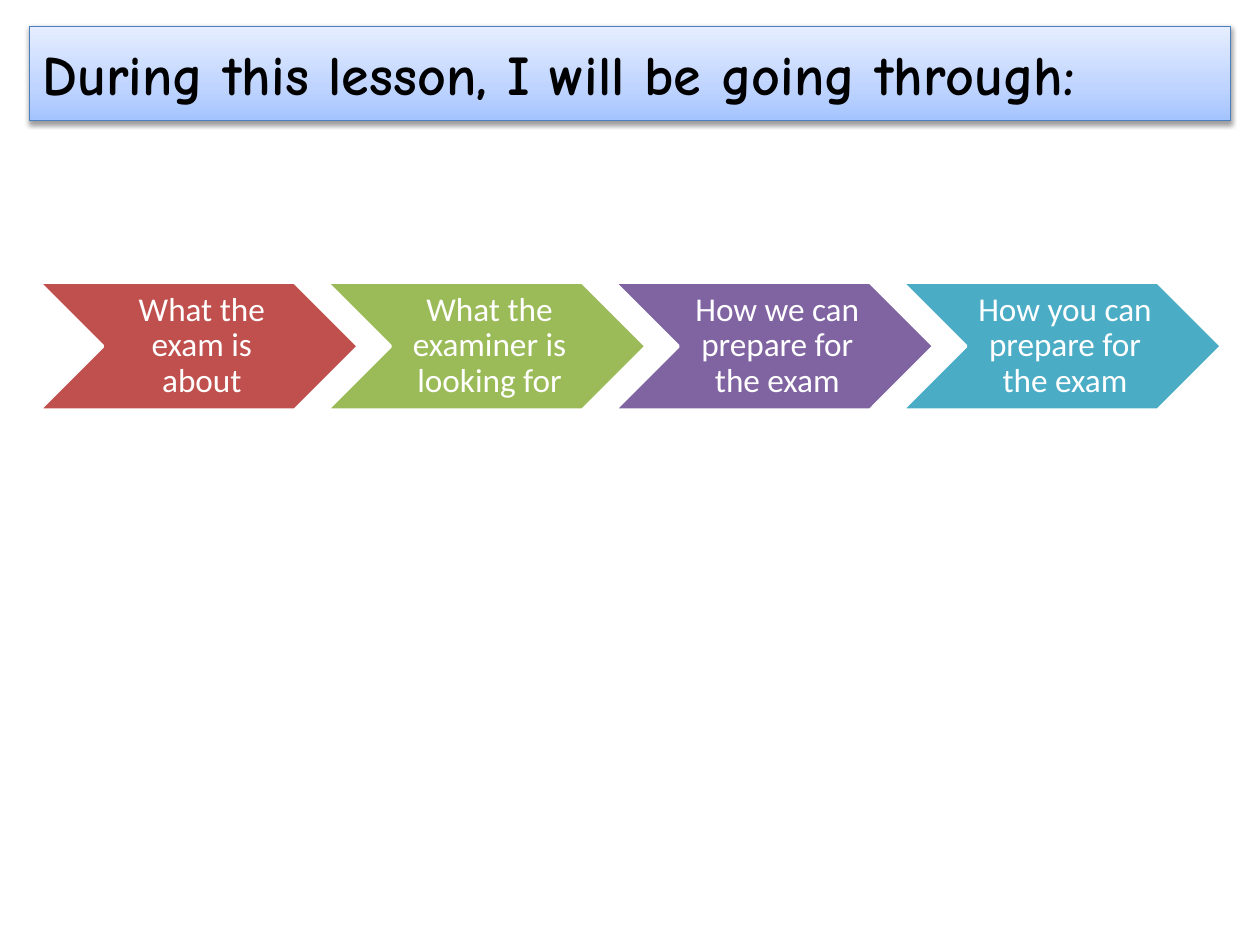
"""Build a lesson overview slide with a title banner and four chevron steps."""
from copy import deepcopy

from pptx import Presentation
from pptx.dml.color import RGBColor
from pptx.enum.shapes import MSO_SHAPE as Shape
from pptx.enum.text import MSO_ANCHOR as Anchor, MSO_AUTO_SIZE as AutoSize, PP_ALIGN as Align
from pptx.oxml import parse_xml
from pptx.oxml.ns import nsdecls, qn
from pptx.util import Cm, Pt

BLACK = RGBColor(0x00, 0x00, 0x00)
WHITE = RGBColor(0xFF, 0xFF, 0xFF)
BORDER_BLUE = RGBColor(0x4B, 0x7E, 0xBC)
BANNER_STOPS = [
    (0, RGBColor(0xA4, 0xC4, 0xFF)),
    (0.35, RGBColor(0xBF, 0xD4, 0xFF)),
    (1, RGBColor(0xE6, 0xEE, 0xFF)),
]
STEPS = [
    ("What the exam is about", RGBColor(0xC0, 0x50, 0x4D)),
    ("What the examiner is looking for", RGBColor(0x9B, 0xBB, 0x59)),
    ("How we can prepare for the exam", RGBColor(0x80, 0x64, 0xA2)),
    ("How you can prepare for the exam", RGBColor(0x4B, 0xAC, 0xC6)),
]
BANNER_SHADOW = (
    f'<a:effectLst {nsdecls("a")}>'
    '<a:outerShdw blurRad="39370" dist="20320" dir="5400000" rotWithShape="0">'
    '<a:srgbClr val="000000"><a:alpha val="38000"/></a:srgbClr>'
    '</a:outerShdw></a:effectLst>'
)


def write_text(shape, text, *, font, size, color, bold=False, align=Align.LEFT, spacing=1.0):
    """Fill the shape with one formatted paragraph."""
    frame = shape.text_frame
    frame.word_wrap = True
    frame.auto_size = AutoSize.NONE
    frame.vertical_anchor = Anchor.MIDDLE
    frame.text = text
    paragraph = frame.paragraphs[0]
    paragraph.alignment = align
    paragraph.line_spacing = spacing
    paragraph.font.name = font
    paragraph.font.size = Pt(size)
    paragraph.font.bold = bold
    paragraph.font.color.rgb = color


presentation = Presentation()
presentation.slide_width = Cm(25.4)
presentation.slide_height = Cm(19.05)
slide = presentation.slides.add_slide(presentation.slide_layouts[5])

banner = slide.shapes.title
banner.left, banner.top = Cm(0.6), Cm(0.53)
banner.width, banner.height = Cm(24.2), Cm(1.9)
banner.fill.gradient()
banner.fill.gradient_angle = 90
stop_list = next(banner.element.spPr.iter(qn("a:gsLst")))
stop_list.append(deepcopy(stop_list[-1]))
for stop, (position, color) in zip(banner.fill.gradient_stops, BANNER_STOPS):
    stop.position = position
    stop.color.rgb = color
banner.line.color.rgb = BORDER_BLUE
banner.line.width = Pt(0.75)
banner.element.spPr.append(parse_xml(BANNER_SHADOW))
write_text(banner, "During this lesson, I will be going through:",
           font="Comic Neue", size=32, color=BLACK, bold=True)

step_left, step_top, step_pitch = Cm(0.78), Cm(5.69), Cm(5.8)
for index, (text, color) in enumerate(STEPS):
    chevron = slide.shapes.add_shape(
        Shape.CHEVRON, step_left + index * step_pitch, step_top, Cm(6.45), Cm(2.58))
    chevron.shadow.inherit = False
    chevron.fill.solid()
    chevron.fill.fore_color.rgb = color
    chevron.line.color.rgb = WHITE
    chevron.line.width = Pt(2)
    frame = chevron.text_frame
    frame.margin_left = Cm(0.2)
    frame.margin_top = frame.margin_right = frame.margin_bottom = Cm(0.07)
    write_text(chevron, text, font="Calibri", size=19, color=WHITE,
               align=Align.CENTER, spacing=0.9)

presentation.save("out.pptx")
